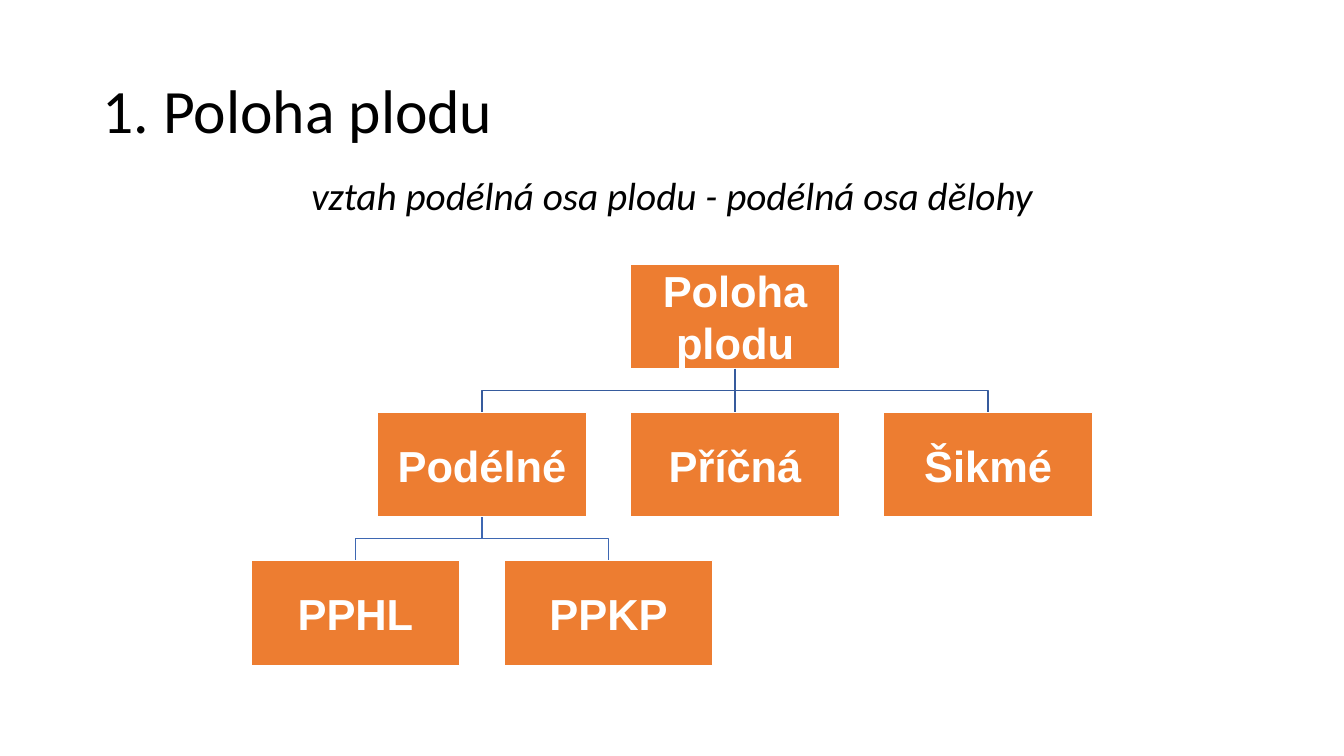
import pptx
import pptx.util
import pptx.dml.color
import pptx.enum.shapes
import pptx.enum.text
import pptx.oxml.ns
import lxml.etree
from dataclasses import dataclass

Inches = pptx.util.Inches
Align = pptx.enum.text.PP_ALIGN
Anchor = pptx.enum.text.MSO_ANCHOR


@dataclass(frozen=True)
class Theme:
    ink: str = "000000"
    white: str = "FFFFFF"
    fill: str = "ED7D31"
    upper: str = "365B9D"
    lower: str = "3E67B2"
    body: str = "Calibri"
    label: str = "Arial"
    title_size: float = 44
    sub_size: float = 28
    box_size: float = 31
    line: float = 1


THEME = Theme()

# Grid of the tree: half-box columns and rows, in inches
LEFT, TOP = 2.49, 2.62
COL, ROW = 1.255, 1.47
WIDE, HIGH = 2.07, 1.04

# Name: (text, column, row)
NODES = {
    "root": ("Poloha plodu", 3, 0),
    "long": ("Podélné", 1, 1),
    "cross": ("Příčná", 3, 1),
    "slant": ("Šikmé", 5, 1),
    "head": ("PPHL", 0, 2),
    "tail": ("PPKP", 2, 2),
}
# Parent: (children, line colour)
LINKS = {
    "root": (("long", "cross", "slant"), THEME.upper),
    "long": (("head", "tail"), THEME.lower),
}


def paint(text):
    return pptx.dml.color.RGBColor.from_string(text)


def write(frame, text, font, size, color, align, bold=False, italic=False):
    frame.word_wrap = True
    frame.vertical_anchor = Anchor.MIDDLE
    para = frame.paragraphs[0]
    para.text = text
    para.alignment = align
    para.font.name = font
    para.font.size = pptx.util.Pt(size)
    para.font.color.rgb = paint(color)
    para.font.bold = bold
    para.font.italic = italic
    return para


def add_text(slide, area, text, size, align, anchor, italic=False):
    box = slide.shapes.add_textbox(*map(Inches, area))
    para = write(box.text_frame, text, THEME.body, size, THEME.ink, align,
                 italic=italic)
    para.line_spacing = 0.9
    box.text_frame.vertical_anchor = anchor


def add_box(slide, text, col, row):
    box = slide.shapes.add_shape(
        pptx.enum.shapes.MSO_SHAPE.RECTANGLE,
        Inches(LEFT + col * COL), Inches(TOP + row * ROW),
        Inches(WIDE), Inches(HIGH))
    box.shadow.inherit = False
    box.fill.solid()
    box.fill.fore_color.rgb = paint(THEME.fill)
    ink(box.line, THEME.white)
    frame = box.text_frame
    frame.margin_left = frame.margin_right = Inches(0.02)
    frame.margin_top = frame.margin_bottom = Inches(0.02)
    write(frame, text, THEME.label, THEME.box_size, THEME.white,
          Align.CENTER, bold=True)
    return box


def ink(line, color):
    line.color.rgb = paint(color)
    line.width = pptx.util.Pt(THEME.line)


def add_link(slide, start, end, color):
    x1, y1 = start.left + start.width // 2, start.top + start.height
    x2, y2 = end.left + end.width // 2, end.top
    if x1 == x2:
        link = slide.shapes.add_connector(
            pptx.enum.shapes.MSO_CONNECTOR.STRAIGHT, x1, y1, x2, y2)
        link.begin_connect(start, 2)
        link.end_connect(end, 0)
        ink(link.line, color)
        props = link._element.spPr
        lxml.etree.SubElement(props, pptx.oxml.ns.qn("a:effectLst"))
    else:
        mid = (y1 + y2) // 2
        path = slide.shapes.build_freeform(x1, y1)
        path.add_line_segments([(x1, mid), (x2, mid), (x2, y2)], close=False)
        link = path.convert_to_shape()
        link.shadow.inherit = False
        link.fill.background()
        ink(link.line, color)


def main():
    deck = pptx.Presentation()
    deck.slide_width, deck.slide_height = Inches(13.33), Inches(7.5)
    slide = deck.slides.add_slide(deck.slide_layouts[6])

    # Heading and definition
    add_text(slide, (0.92, 0.4, 11.5, 1.45), "1. Poloha plodu",
             THEME.title_size, Align.LEFT, Anchor.MIDDLE)
    add_text(slide, (1.94, 1.7, 9.45, 1.06),
             "vztah podélná osa plodu - podélná osa dělohy",
             THEME.sub_size, Align.CENTER, Anchor.TOP, italic=True)

    # Tree of positions
    boxes = {name: add_box(slide, *node) for name, node in NODES.items()}
    for start, (ends, color) in LINKS.items():
        for end in ends:
            add_link(slide, boxes[start], boxes[end], color)

    deck.save("out.pptx")


if __name__ == "__main__":
    main()
